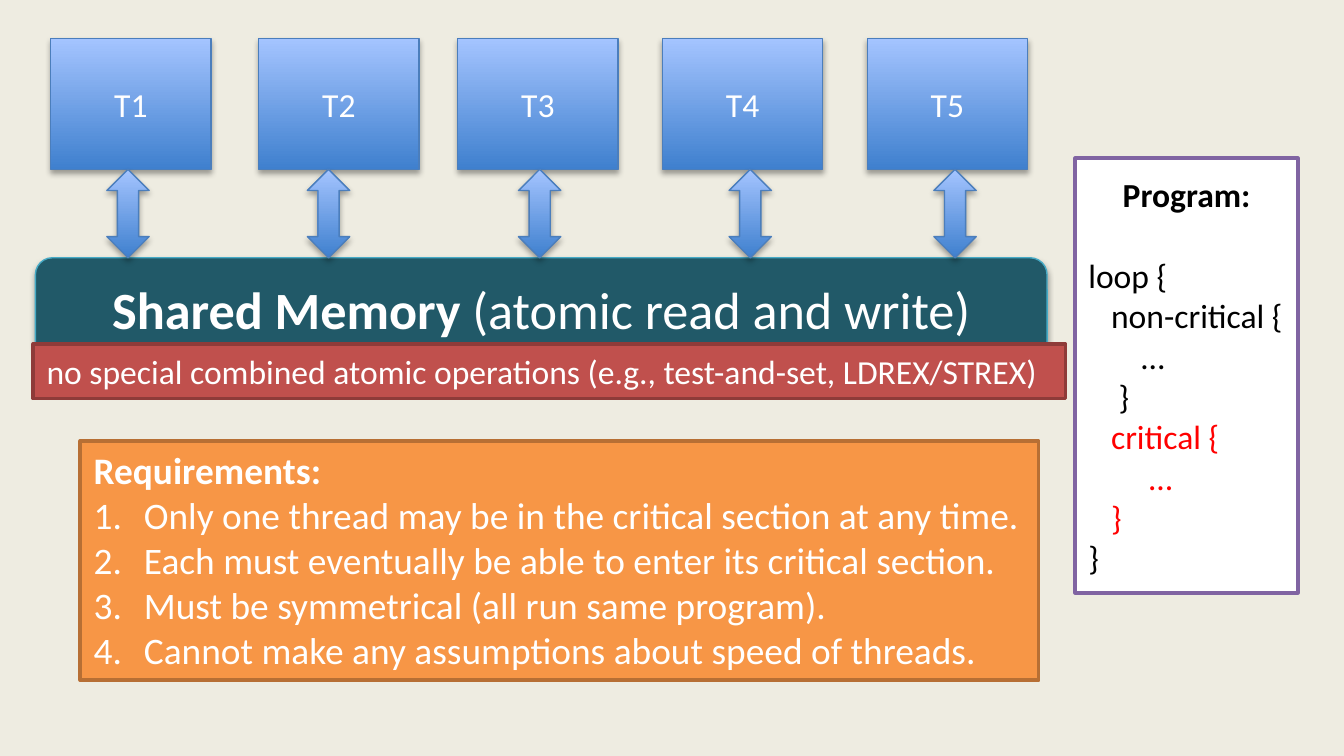
from pptx import Presentation
from pptx.dml.color import RGBColor
from pptx.enum.shapes import MSO_SHAPE
from pptx.enum.text import MSO_ANCHOR, MSO_AUTO_SIZE, PP_ALIGN
from pptx.oxml.xmlchemy import OxmlElement
from pptx.util import Cm, Pt

BACKGROUND = RGBColor(0xEE, 0xEC, 0xE1)
WHITE = RGBColor(0xFF, 0xFF, 0xFF)
BLACK = RGBColor(0, 0, 0)
RED = RGBColor(0xFF, 0, 0)
BLUE_DARK = RGBColor(0x3F, 0x80, 0xCE)
BLUE_LIGHT = RGBColor(0xA4, 0xC4, 0xFF)
BLUE_EDGE = RGBColor(0x4B, 0x7E, 0xBC)
TEAL = RGBColor(0x21, 0x59, 0x68)
TEAL_EDGE = RGBColor(0x46, 0xAA, 0xC5)
PURPLE = RGBColor(0x80, 0x64, 0xA2)
ORANGE = RGBColor(0xF7, 0x96, 0x46)
ORANGE_EDGE = RGBColor(0xB7, 0x6F, 0x34)
BRICK = RGBColor(0xC0, 0x50, 0x4D)
BRICK_EDGE = RGBColor(0x8E, 0x3B, 0x39)

deck = Presentation()
deck.slide_width, deck.slide_height = Cm(25.4), Cm(14.28)
slide = deck.slides.add_slide(deck.slide_layouts[6])
slide.background.fill.solid()
slide.background.fill.fore_color.rgb = BACKGROUND


def add_box(kind, left, top, width, height, edge, edge_width, color=None):
    """Shape with a solid fill, or the blue gradient when no color is given."""
    box = slide.shapes.add_shape(kind, Cm(left), Cm(top), Cm(width), Cm(height))
    if color is None:
        box.fill.gradient()
        box.fill.gradient_angle = 90
        for stop, shade in zip(box.fill.gradient_stops, (BLUE_DARK, BLUE_LIGHT)):
            stop.color.rgb = shade
    else:
        box.fill.solid()
        box.fill.fore_color.rgb = color
    box.line.color.rgb = edge
    box.line.width = Pt(edge_width)
    return box


def add_run(paragraph, text, size, color=WHITE, bold=False):
    run = paragraph.add_run()
    run.text = text
    run.font.name = "Calibri"
    run.font.size = Pt(size)
    run.font.bold = bold
    run.font.color.rgb = color


# Threads
for number, left in enumerate((0.96, 4.89, 8.65, 12.52, 16.39), 1):
    thread = add_box(MSO_SHAPE.RECTANGLE, left, 0.73, 3.03, 2.47, BLUE_EDGE, 0.75)
    label = thread.text_frame.paragraphs[0]
    label.alignment = PP_ALIGN.CENTER
    add_run(label, f"T{number}", 18)

# Shared memory
memory = add_box(MSO_SHAPE.ROUNDED_RECTANGLE, 0.67, 4.87, 19.12, 1.91,
                 TEAL_EDGE, 0.75, TEAL)
memory_title = memory.text_frame.paragraphs[0]
memory_title.alignment = PP_ALIGN.CENTER
add_run(memory_title, "Shared Memory ", 28, bold=True)
add_run(memory_title, "(atomic read and write)", 28)

# Arrows between threads and memory
for left in (2.02, 5.81, 9.8, 13.78, 17.65):
    add_box(MSO_SHAPE.UP_DOWN_ARROW, left, 3.2, 0.8, 1.67, BLUE_EDGE, 0.75)

# Program listing
program = add_box(MSO_SHAPE.RECTANGLE, 20.32, 2.99, 4.21, 8.21, PURPLE, 2, WHITE)
program.shadow.inherit = False
program_title = program.text_frame.paragraphs[0]
program_title.alignment = PP_ALIGN.CENTER
program_title.space_after = Pt(22)
add_run(program_title, "Program:", 18, BLACK, bold=True)
for indent, code, color in (
    (0, "loop {", BLACK),
    (0.43, "non-critical {", BLACK),
    (1, "…", BLACK),
    (0.57, "}", BLACK),
    (0.43, "critical {", RED),
    (1.15, "…", RED),
    (0.43, "}", RED),
    (0, "}", BLACK),
):
    line = program.text_frame.add_paragraph()
    line.alignment = PP_ALIGN.LEFT
    line._p.get_or_add_pPr().set("marL", str(Cm(indent)))
    add_run(line, code, 18, color)

# Requirements
requirements = add_box(MSO_SHAPE.RECTANGLE, 1.52, 8.33, 18.11, 4.52,
                       ORANGE_EDGE, 2, ORANGE)
heading = requirements.text_frame.paragraphs[0]
heading.alignment = PP_ALIGN.LEFT
add_run(heading, "Requirements:", 20, bold=True)
for requirement in (
    "Only one thread may be in the critical section at any time.",
    "Each must eventually be able to enter its critical section.",
    "Must be symmetrical (all run same program).",
    "Cannot make any assumptions about speed of threads.",
):
    item = requirements.text_frame.add_paragraph()
    item.alignment = PP_ALIGN.LEFT
    properties = item._p.get_or_add_pPr()
    properties.set("marL", str(Cm(0.95)))
    properties.set("indent", str(Cm(-0.95)))
    numbering = OxmlElement("a:buAutoNum")
    numbering.set("type", "arabicPeriod")
    properties.append(numbering)
    add_run(item, requirement, 20)

# Restriction on the memory
restriction = add_box(MSO_SHAPE.RECTANGLE, 0.63, 6.5, 19.51, 1.03,
                      BRICK_EDGE, 2, BRICK)
restriction_text = restriction.text_frame.paragraphs[0]
restriction_text.alignment = PP_ALIGN.LEFT
add_run(restriction_text,
        "no special combined atomic operations (e.g., test-and-set, LDREX/STREX)", 18)

# Boxes that fit their text
for panel in (requirements, restriction):
    panel.shadow.inherit = False
    panel.text_frame.word_wrap = False
    panel.text_frame.auto_size = MSO_AUTO_SIZE.SHAPE_TO_FIT_TEXT
    panel.text_frame.vertical_anchor = MSO_ANCHOR.TOP

deck.save("out.pptx")
